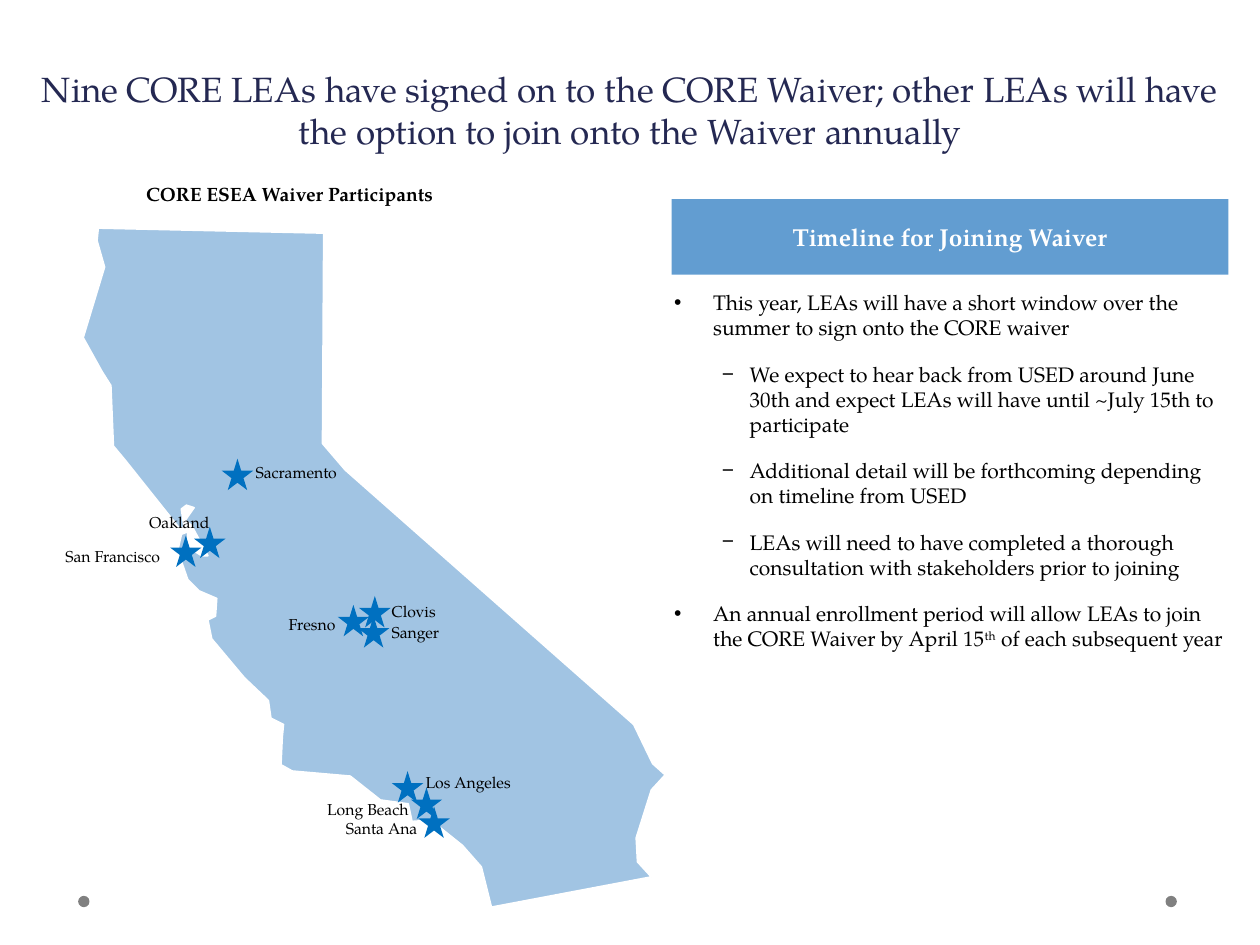
from lxml import etree
from pptx import Presentation
from pptx.dml.color import RGBColor
from pptx.enum.shapes import MSO_SHAPE
from pptx.enum.text import MSO_ANCHOR, MSO_AUTO_SIZE, PP_ALIGN
from pptx.oxml.ns import qn
from pptx.util import Inches, Pt

RECT, OVAL, STAR = MSO_SHAPE.RECTANGLE, MSO_SHAPE.OVAL, MSO_SHAPE.STAR_5_POINT
LEFT, CENTER, RIGHT = PP_ALIGN.LEFT, PP_ALIGN.CENTER, PP_ALIGN.RIGHT
TOP, MIDDLE, BOTTOM = MSO_ANCHOR.TOP, MSO_ANCHOR.MIDDLE, MSO_ANCHOR.BOTTOM
NO_FIT, GROW = MSO_AUTO_SIZE.NONE, MSO_AUTO_SIZE.SHAPE_TO_FIT_TEXT

CALIFORNIA = [
    (0.81, 2.95), (0.88, 3.06), (0.9, 3.54), (1, 3.66), (1.43, 4.2), (1.46, 4.18),
    (1.44, 4.04), (1.48, 4.01), (1.54, 4.03), (1.47, 4.13), (1.52, 4.17), (1.65, 4.41),
    (1.6, 4.41), (1.49, 4.34), (1.49, 4.22), (1.44, 4.24), (1.41, 4.37), (1.49, 4.6),
    (1.58, 4.69), (1.72, 4.75), (1.71, 4.89), (1.65, 4.92), (1.68, 5.07), (1.94, 5.38),
    (2.13, 5.56), (2.15, 5.7), (2.25, 5.75), (2.24, 5.85), (2.23, 6.07), (2.32, 6.12),
    (2.78, 6.16), (3.02, 6.35), (3.24, 6.38), (3.27, 6.52), (3.42, 6.51), (3.67, 6.71),
    (3.82, 6.88), (3.9, 7.2), (5.17, 6.96), (5.06, 6.84), (5.05, 6.65), (5.17, 6.27),
    (5.28, 6.15), (5.18, 6.06), (5.03, 5.75), (2.74, 3.73), (2.56, 3.52), (2.57, 1.85),
    (0.78, 1.81), (0.77, 1.91), (0.83, 2.12), (0.66, 2.68),
]

# name, star left and top, label left, top and width, label alignment
CITIES = [
    ("Long Beach", 3.26, 6.25, 2.33, 6.3, 1.01, RIGHT),
    ("Sanger", 2.84, 4.89, 3.01, 4.89, 0.83, LEFT),
    ("Fresno", 2.68, 4.8, 1.93, 4.83, 0.83, RIGHT),
    ("Santa Ana", 3.32, 6.4, 2.4, 6.45, 1.01, RIGHT),
    ("San Francisco", 1.35, 4.25, 0.42, 4.29, 1.01, LEFT),
    ("Oakland", 1.54, 4.18, 0.75, 4.02, 1.01, RIGHT),
    ("Sacramento", 1.76, 3.64, 1.93, 3.62, 1.01, LEFT),
    ("Clovis", 2.85, 4.73, 3.01, 4.73, 0.83, LEFT),
    ("Los Angeles", 3.11, 6.12, 3.28, 6.08, 1.16, LEFT),
]

# level and runs; every second run is superscript
TIMELINE = [
    (0, ["This year, LEAs will have a short window over the summer to sign onto the CORE waiver"]),
    (1, ["We expect to hear back from USED around June 30th and expect LEAs will have "
         "until ~July 15th to participate"]),
    (1, ["Additional detail will be forthcoming depending on timeline from USED"]),
    (1, ["LEAs will need to have completed a thorough consultation with stakeholders "
         "prior to joining"]),
    (0, ["An annual enrollment period will allow LEAs to join the CORE Waiver by April 15",
         "th", " of each subsequent year"]),
]
BULLETS = [("•", 0.31, 0.31), ("−", 0.6, 0.22)]


def rgb(color):
    return RGBColor.from_string(color)


def add_run(p, text, size=12, color="000000", bold=False, superscript=False):
    r = p.add_run()
    r.text = text
    r.font.name = "TeX Gyre Pagella"
    r.font.size = Pt(size)
    r.font.bold = bold
    r.font.color.rgb = rgb(color)
    if superscript:
        r._r.get_or_add_rPr().set("baseline", "30000")


def set_bullet(p, char, margin, hang):
    pPr = p._p.get_or_add_pPr()
    pPr.set("marL", str(Inches(margin)))
    pPr.set("indent", str(-Inches(hang)))
    etree.SubElement(pPr, qn("a:buChar")).set("char", char)


class SlideBuilder:
    star_fill = "0070C0"
    land_fill = "A1C4E3"
    banner_fill = "629DD1"
    dot_fill = "808080"
    title_color = "242852"

    def __init__(self, prs):
        self.s = prs.slides.add_slide(prs.slide_layouts[1])

    def place(self, sp, x, y, w, h):
        sp.left, sp.top, sp.width, sp.height = map(Inches, (x, y, w, h))

    def frame(self, sp, anchor=TOP, fit=NO_FIT):
        tf = sp.text_frame
        tf.word_wrap = True
        tf.auto_size = fit
        tf.vertical_anchor = anchor
        return tf

    def add_text(self, tf, text, align=LEFT, **fmt):
        p = tf.paragraphs[0]
        p.alignment = align
        add_run(p, text, **fmt)

    def title(self, text, *box):
        sp = self.s.shapes.title
        self.place(sp, *box)
        self.add_text(self.frame(sp, BOTTOM), text, CENTER, size=20, color=self.title_color)

    def bullets(self, items, *box):
        sp = self.s.placeholders[1]
        self.place(sp, *box)
        tf = self.frame(sp)
        tf.margin_left = Inches(0.1)
        tf.margin_right = tf.margin_top = tf.margin_bottom = Inches(0.05)
        for i, (level, runs) in enumerate(items):
            p = tf.add_paragraph() if i else tf.paragraphs[0]
            p.level = level
            p.space_before = Pt(12 if i else 0)
            set_bullet(p, *BULLETS[level])
            for j, text in enumerate(runs):
                add_run(p, text, superscript=j % 2 == 1)

    def paint(self, sp, fill, line=None):
        sp.shadow.inherit = False
        sp.fill.solid()
        sp.fill.fore_color.rgb = rgb(fill)
        if line:
            sp.line.color.rgb = rgb(line)
            sp.line.width = Pt(1)
        else:
            sp.line.fill.background()

    def shape(self, kind, fill, *box):
        sp = self.s.shapes.add_shape(kind, *map(Inches, box))
        self.paint(sp, fill)
        return sp

    def banner(self, text, *box):
        sp = self.shape(RECT, self.banner_fill, *box)
        self.add_text(self.frame(sp, MIDDLE), text, CENTER, size=14, color="FFFFFF", bold=True)

    def outline(self, points):
        start, *rest = [(Inches(x), Inches(y)) for x, y in points]
        builder = self.s.shapes.build_freeform(*start)
        builder.add_line_segments(rest, close=True)
        self.paint(builder.convert_to_shape(), self.land_fill, "FFFFFF")

    def label(self, text, *box, align=LEFT, **fmt):
        sp = self.s.shapes.add_textbox(*map(Inches, box))
        self.add_text(self.frame(sp, fit=GROW), text, align, **fmt)

    def city(self, name, star_x, star_y, x, y, w, align):
        self.label(name, x, y, w, 0.25, align=align, size=9)
        self.shape(STAR, self.star_fill, star_x, star_y, 0.25, 0.25)


def main():
    prs = Presentation()
    prs.slide_width, prs.slide_height = Inches(10), Inches(7.5)
    b = SlideBuilder(prs)
    for x in (9.25, 0.62):
        b.shape(OVAL, b.dot_fill, x, 7.11, 0.09, 0.09)
    b.title("Nine CORE LEAs have signed on to the CORE Waiver; other LEAs will have "
            "the option to join onto the Waiver annually", 0.19, -0.5, 9.62, 1.75)
    b.bullets(TIMELINE, 5.25, 2.25, 4.55, 4.39)
    b.banner("Timeline for Joining Waiver", 5.33, 1.58, 4.42, 0.6)
    b.outline(CALIFORNIA)
    for city in CITIES:
        b.city(*city)
    b.label("CORE ESEA Waiver Participants", 0.93, 1.4, 2.74, 0.29,
            align=CENTER, size=11, bold=True)
    prs.save("out.pptx")


if __name__ == "__main__":
    main()
